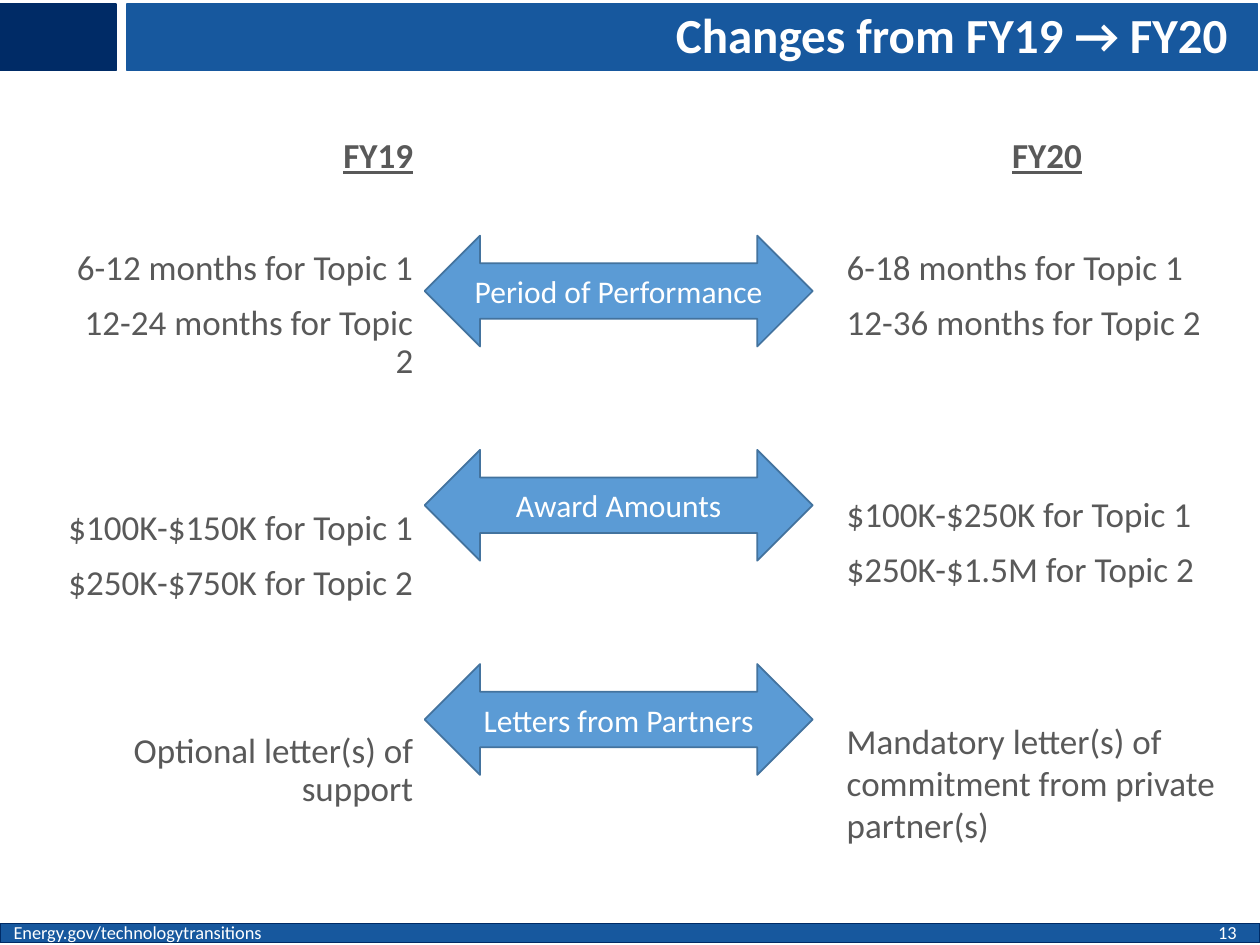
from pptx import Presentation
from pptx.dml.color import RGBColor
from pptx.enum.shapes import MSO_SHAPE
from pptx.enum.text import MSO_ANCHOR, MSO_AUTO_SIZE, PP_ALIGN
from pptx.oxml.ns import qn
from pptx.util import Inches, Pt
from lxml import etree

BLUE, NAVY, WHITE, GREY = "17589E", "002B66", "FFFFFF", "595959"
ARROW_FILL, ARROW_LINE = "5B9BD5", "43739E"

# Space before, in points: next line, next row, next topic
LINE_GAP, ROW_GAP, TOPIC_GAP = 10, 42, 74

# Text, space before, line spacing
FY19_LINES = [
    ("6-12 months for Topic 1", ROW_GAP, 0.9),
    ("12-24 months for Topic 2", LINE_GAP, 0.9),
    ("$100K-$150K for Topic 1", TOPIC_GAP, 0.9),
    ("$250K-$750K for Topic 2", LINE_GAP, 0.9),
    ("Optional letter(s) of support", TOPIC_GAP, 0.9),
]
FY20_LINES = [
    ("6-18 months for Topic 1", ROW_GAP, 0.9),
    ("12-36 months for Topic 2", LINE_GAP, 0.9),
    ("$100K-$250K for Topic 1", TOPIC_GAP + 14, 0.9),
    ("$250K-$1.5M for Topic 2", LINE_GAP, 0.9),
    ("Mandatory letter(s) of commitment from private partner(s)", TOPIC_GAP, 1.0),
]
TOPICS = ["Period of Performance", "Award Amounts", "Letters from Partners"]


def rgb(value):
    return RGBColor.from_string(value)


def set_font(paragraph, size, color, bold=False, underline=False):
    font = paragraph.font
    font.name, font.size = "Calibri", Pt(size)
    font.bold, font.underline = bold, underline
    font.color.rgb = rgb(color)


def place(shape, box):
    shape.left, shape.top, shape.width, shape.height = map(Inches, box)


def bring_to_front(slide, shape):
    slide.shapes._spTree.append(shape._element)


def add_filled_shape(slide, kind, box, fill, line):
    shape = slide.shapes.add_shape(kind, *map(Inches, box))
    shape.shadow.inherit = False
    shape.fill.solid()
    shape.fill.fore_color.rgb = rgb(fill)
    shape.line.color.rgb = rgb(line)
    shape.line.width = Pt(1)
    return shape


def add_header(slide, box, title):
    left, top, width, height = box
    add_filled_shape(slide, MSO_SHAPE.RECTANGLE,
                     (left + 1.01, top, width - 1.03, height), BLUE, BLUE)
    add_filled_shape(slide, MSO_SHAPE.RECTANGLE, (left, top, 0.92, height), NAVY, NAVY)
    shape = slide.shapes.title
    place(shape, (left + 2.43, top, width - 2.59, height))
    bring_to_front(slide, shape)
    frame = shape.text_frame
    frame.text = title
    frame.auto_size = MSO_AUTO_SIZE.NONE
    frame.vertical_anchor = MSO_ANCHOR.MIDDLE
    paragraph = frame.paragraphs[0]
    paragraph.alignment = PP_ALIGN.RIGHT
    paragraph.line_spacing = 0.9
    set_font(paragraph, 28, WHITE, bold=True)


def add_footer(slide, box, address, number):
    left, top, width, height = box
    add_filled_shape(slide, MSO_SHAPE.RECTANGLE, box, BLUE, NAVY)
    for text, offset, text_width in ((address, 0.01, 2.77), (number, width - 0.43, 0.41)):
        text_box = slide.shapes.add_textbox(
            Inches(left + offset), Inches(top - 0.07), Inches(text_width), Inches(0.29))
        text_box.text_frame.word_wrap = True
        text_box.text_frame.text = text
        set_font(text_box.text_frame.paragraphs[0], 10.5, WHITE)


def fill_year_column(slide, placeholder, box, heading, lines, heading_alignment, alignment):
    place(placeholder, box)
    bring_to_front(slide, placeholder)
    frame = placeholder.text_frame
    frame.auto_size = MSO_AUTO_SIZE.NONE
    for index, (text, gap, spacing) in enumerate([(heading, 0, 0.9)] + lines):
        is_heading = index == 0
        paragraph = frame.paragraphs[0] if is_heading else frame.add_paragraph()
        paragraph.text = text
        properties = paragraph._p.get_or_add_pPr()
        properties.set("marL", "0")
        properties.set("indent", "0")
        etree.SubElement(properties, qn("a:buNone"))
        paragraph.alignment = heading_alignment if is_heading else alignment
        paragraph.space_before = Pt(gap)
        paragraph.line_spacing = spacing
        set_font(paragraph, 20, GREY, bold=is_heading, underline=is_heading)


def add_topic_arrows(slide, box, topics):
    left, top, width, height = box
    arrow_height = 0.88
    step = (height - arrow_height) / (len(topics) - 1)
    for index, topic in enumerate(topics):
        arrow = add_filled_shape(
            slide, MSO_SHAPE.LEFT_RIGHT_ARROW,
            (left, top + index * step, width, arrow_height), ARROW_FILL, ARROW_LINE)
        frame = arrow.text_frame
        frame.text = topic
        frame.vertical_anchor = MSO_ANCHOR.MIDDLE
        frame.paragraphs[0].alignment = PP_ALIGN.CENTER
        set_font(frame.paragraphs[0], 18, WHITE)


def main():
    presentation = Presentation()
    presentation.slide_width, presentation.slide_height = Inches(10), Inches(7.5)
    slide = presentation.slides.add_slide(presentation.slide_layouts[3])
    fy19, fy20 = slide.placeholders[1], slide.placeholders[2]

    add_header(slide, (0, 0.03, 10, 0.53), "Changes from FY19 → FY20")
    add_footer(slide, (0, 7.33, 10, 0.15), "Energy.gov/technologytransitions", "13")
    fill_year_column(slide, fy20, (6.62, 1.05, 3.38, 6.45), "FY20", FY20_LINES,
                     PP_ALIGN.CENTER, PP_ALIGN.LEFT)
    fill_year_column(slide, fy19, (0.37, 1.05, 3.01, 6.45), "FY19", FY19_LINES,
                     PP_ALIGN.RIGHT, PP_ALIGN.RIGHT)
    add_topic_arrows(slide, (3.37, 1.87, 3.08, 4.28), TOPICS)

    presentation.save("out.pptx")


if __name__ == "__main__":
    main()
